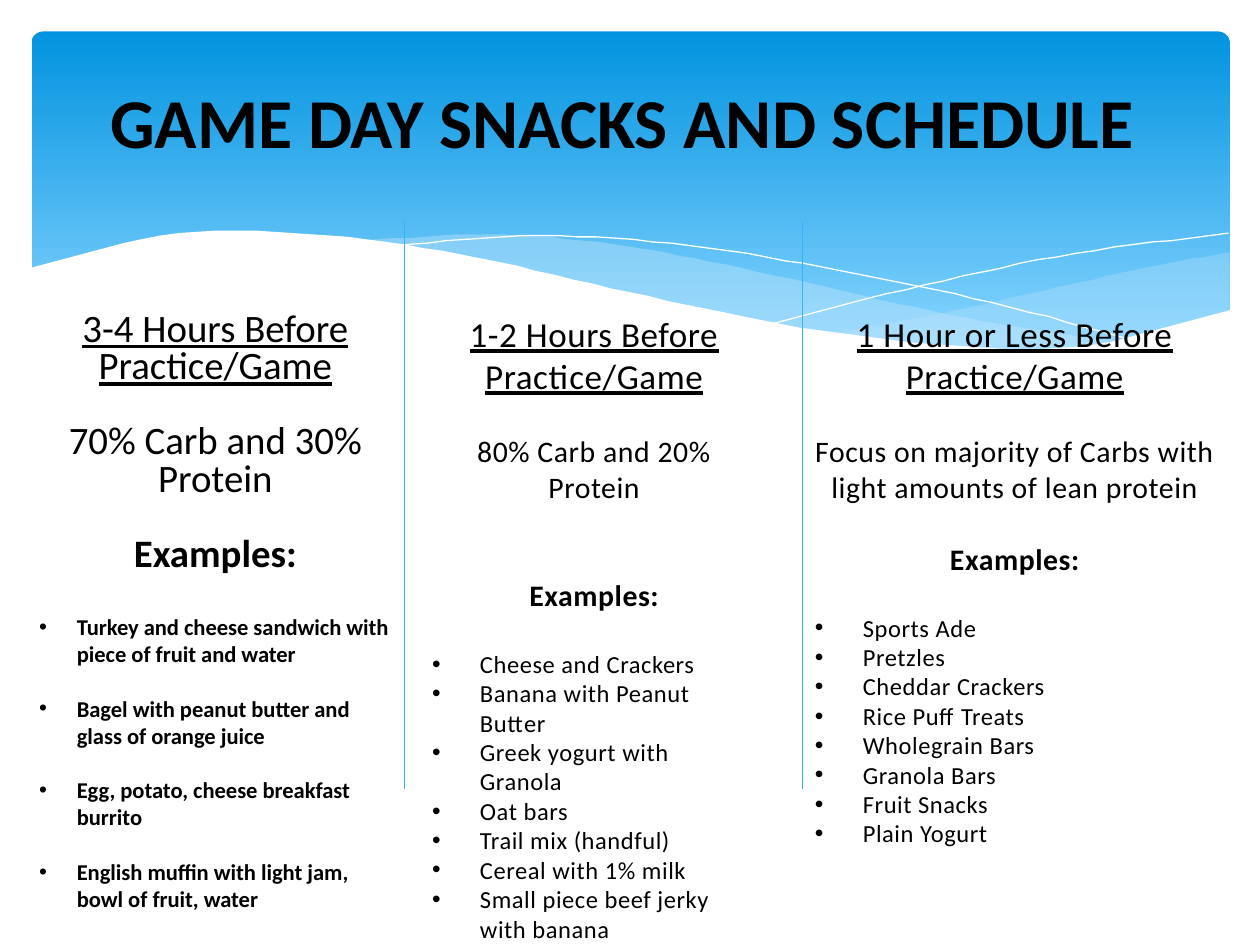
from dataclasses import dataclass
from typing import Optional

from lxml.etree import SubElement
from pptx import Presentation
from pptx.dml.color import RGBColor
from pptx.enum.shapes import MSO_CONNECTOR, MSO_SHAPE
from pptx.enum.text import MSO_ANCHOR, MSO_AUTO_SIZE, PP_ALIGN
from pptx.oxml.ns import qn
from pptx.util import Pt

COLORS = {"text": "000000", "white": "FFFFFF", "wave": "C6E7FC", "divider": "31B6FD",
          "sky_top": "0293E0", "sky_bottom": "83D3FE"}
FONT = "Calibri"
LINE_HEIGHT = 1.22
UNIT = Pt(0.72)  # waves are measured in hundredths of an inch
STEPS = 8  # straight pieces between two heights of a wave
COLUMN_TOP = 175
DIVIDER_TOP, DIVIDER_BOTTOM = 126.7, 450.7


@dataclass
class Wave:
    """A band between two curves, each given by its heights at equal steps."""
    left: int
    right: int
    upper: list[int]
    lower: Optional[list[int]] = None
    fill: str = "white"
    opacity: int = 100


@dataclass
class Column:
    left: float
    width: float
    height: float
    heading: str
    mix: str
    items: list[str]
    heading_size: float = 20
    body_size: float = 17
    item_size: float = 14
    hanging: float = 27.4
    tracking: float = 0.3
    line_spacing: float = 1.0
    bold_items: bool = False
    item_gap: float = 0
    blank_lines: int = 1  # between the mix and the examples
    heading_right: float = 0


WAVES = [
    Wave(661, 976, [265, 250, 233, 215, 200], [265, 274, 278, 271, 247], "wave", 29),
    Wave(286, 893, [191, 186, 194, 213, 236, 257, 273],
         [191, 208, 232, 253, 269, 278, 273], "wave", 40),
    Wave(309, 907, [195, 187, 195, 215, 240, 272]),
    Wave(613, 975, [257, 226, 201, 185]),
    Wave(23, 977, [213, 185, 187, 205, 232, 257, 273, 275, 246], [329, 329]),
]

COLUMNS = [
    Column(15.1, 216, 347, "3-4 Hours Before Practice/Game", "70% Carb and 30% Protein",
           ["Turkey and cheese sandwich with piece of fruit and water",
            "Bagel with peanut butter and glass of orange juice",
            "Egg, potato, cheese breakfast burrito",
            "English muffin with light jam, bowl of fruit, water"],
           heading_size=22.2, body_size=22.2, item_size=12.9, hanging=21.6, tracking=0,
           line_spacing=0.8, bold_items=True, item_gap=12.9 * LINE_HEIGHT),
    Column(239.8, 218.9, 324, "1-2 Hours Before Practice/Game", "80% Carb and 20% Protein",
           ["Cheese and Crackers", "Banana with Peanut Butter", "Greek yogurt with Granola",
            "Oat bars", "Trail mix (handful)", "Cereal with 1% milk",
            "Small piece beef jerky with banana"], blank_lines=2, heading_right=19.5),
    Column(458.6, 242.6, 324, "1 Hour or Less Before Practice/Game",
           "Focus on majority of Carbs with light amounts of lean protein",
           ["Sports Ade", "Pretzles", "Cheddar Crackers", "Rice Puff Treats",
            "Wholegrain Bars", "Granola Bars", "Fruit Snacks", "Plain Yogurt"]),
]


def rgb(name: str) -> RGBColor:
    return RGBColor.from_string(COLORS[name])


def draw_sky(shapes) -> None:
    sky = shapes.add_shape(MSO_SHAPE.ROUNDED_RECTANGLE, Pt(18), Pt(18), Pt(684.7), Pt(194.4))
    sky.adjustments[0] = 0.034
    sky.shadow.inherit = False
    sky.line.fill.background()
    sky.fill.gradient()
    sky.fill.gradient_angle = 270
    for stop, position, name in zip(sky.fill.gradient_stops, (0, 0.9), ("sky_top", "sky_bottom")):
        stop.position = position
        stop.color.rgb = rgb(name)


def smooth_curve(left: int, right: int, heights: list[int]) -> list[tuple[float, float]]:
    """Return the points of a Catmull-Rom curve through equally spaced heights."""
    count = len(heights) - 1
    padded = [2 * heights[0] - heights[1], *heights, 2 * heights[-1] - heights[-2]]
    points = []
    for step in range(count * STEPS + 1):
        index = min(step // STEPS, count - 1)
        t = step / STEPS - index
        a, b, c, d = padded[index:index + 4]
        y = b + t / 2 * (c - a + t * (2 * a - 5 * b + 4 * c - d + t * (3 * (b - c) + d - a)))
        points.append((left + (right - left) * step / (count * STEPS), y))
    return points


def draw_wave(shapes, wave: Wave) -> None:
    """Draw a filled band, or a hairline when the wave has no lower curve."""
    points = smooth_curve(wave.left, wave.right, wave.upper)
    if wave.lower:
        points += reversed(smooth_curve(wave.left, wave.right, wave.lower))
    builder = shapes.build_freeform(*points[0], scale=UNIT)
    builder.add_line_segments(points[1:], close=wave.lower is not None)
    shape = builder.convert_to_shape()
    shape.shadow.inherit = False
    if wave.lower is None:
        shape.fill.background()
        shape.line.color.rgb = rgb(wave.fill)
        shape.line.width = Pt(0)
        return
    shape.line.fill.background()
    shape.fill.solid()
    shape.fill.fore_color.rgb = rgb(wave.fill)
    if wave.opacity < 100:
        color = shape.element.spPr.find(qn("a:solidFill"))[0]
        SubElement(color, qn("a:alpha"), val=str(wave.opacity * 1000))


def place(box, left: float, top: float, width: float, height: float) -> None:
    box.left, box.top, box.width, box.height = Pt(left), Pt(top), Pt(width), Pt(height)
    box.text_frame.word_wrap = True
    box.text_frame.auto_size = MSO_AUTO_SIZE.NONE


def format_text(para, size: float, bold: bool = False, underline: bool = False,
                tracking: float = 0) -> None:
    for span in para.runs:
        font = span.font
        font.name, font.size, font.bold, font.underline = FONT, Pt(size), bold, underline
        font.color.rgb = rgb("text")
        if tracking:
            span._r.get_or_add_rPr().set("spc", str(round(tracking * 100)))


def set_layout(para, gap: float, spacing: float, hanging: float = 0) -> None:
    """Centre a paragraph, or bullet it when it has a hanging indent."""
    para.space_before, para.space_after = Pt(gap), Pt(0)
    para.line_spacing = spacing
    para.alignment = PP_ALIGN.LEFT if hanging else PP_ALIGN.CENTER
    properties = para._p.get_or_add_pPr()
    properties.set("marL", str(Pt(hanging)))
    properties.set("indent", str(-Pt(hanging)))
    if hanging:
        SubElement(properties, qn("a:buFont"), typeface="Arial")
        SubElement(properties, qn("a:buChar"), char="•")
    else:
        SubElement(properties, qn("a:buNone"))


def fill_column(box, column: Column) -> None:
    place(box, column.left, COLUMN_TOP, column.width, column.height)
    frame = box.text_frame
    frame.vertical_anchor = MSO_ANCHOR.TOP
    frame.text = "\n".join([column.heading, column.mix, "Examples:", *column.items])
    heading, mix, examples, *items = frame.paragraphs
    spacing, tracking = column.line_spacing, column.tracking
    blank = column.body_size * LINE_HEIGHT * spacing

    set_layout(heading, 0, spacing)
    heading._p.pPr.set("marR", str(Pt(column.heading_right)))
    format_text(heading, column.heading_size, underline=True, tracking=tracking)
    set_layout(mix, blank, spacing)
    format_text(mix, column.body_size, tracking=tracking)
    set_layout(examples, blank * column.blank_lines, spacing)
    format_text(examples, column.body_size, bold=True, tracking=tracking)
    for index, item in enumerate(items):
        set_layout(item, column.item_gap if index else blank, 1.0, column.hanging)
        format_text(item, column.item_size, bold=column.bold_items, tracking=tracking)


def draw_divider(shapes, x: float) -> None:
    divider = shapes.add_connector(MSO_CONNECTOR.STRAIGHT, Pt(x), Pt(DIVIDER_TOP),
                                   Pt(x), Pt(DIVIDER_BOTTOM))
    divider.line.color.rgb = rgb("divider")
    divider.line.width = Pt(0.75)
    SubElement(divider.element.spPr, qn("a:effectLst"))


def main() -> None:
    deck = Presentation()
    deck.slide_width, deck.slide_height = Pt(720), Pt(540)
    page = deck.slides.add_slide(deck.slide_layouts[1])
    shapes = page.shapes
    title, body = shapes.title, page.placeholders[1]
    draw_sky(shapes)
    for wave in WAVES:
        draw_wave(shapes, wave)
    for placeholder in (body, title):  # bring in front of the waves
        shapes.element.append(placeholder.element)
    place(title, 18, 23.8, 684, 90)
    title.text_frame.vertical_anchor = MSO_ANCHOR.MIDDLE
    title.text_frame.text = "GAME DAY SNACKS AND SCHEDULE "
    set_layout(title.text_frame.paragraphs[0], 0, 1.0)
    format_text(title.text_frame.paragraphs[0], 40, bold=True)
    fill_column(body, COLUMNS[0])
    for column in COLUMNS[1:]:
        fill_column(shapes.add_textbox(0, 0, 0, 0), column)
    for x in (231.1, 458.6):
        draw_divider(shapes, x)
    deck.save("out.pptx")


if __name__ == "__main__":
    main()
